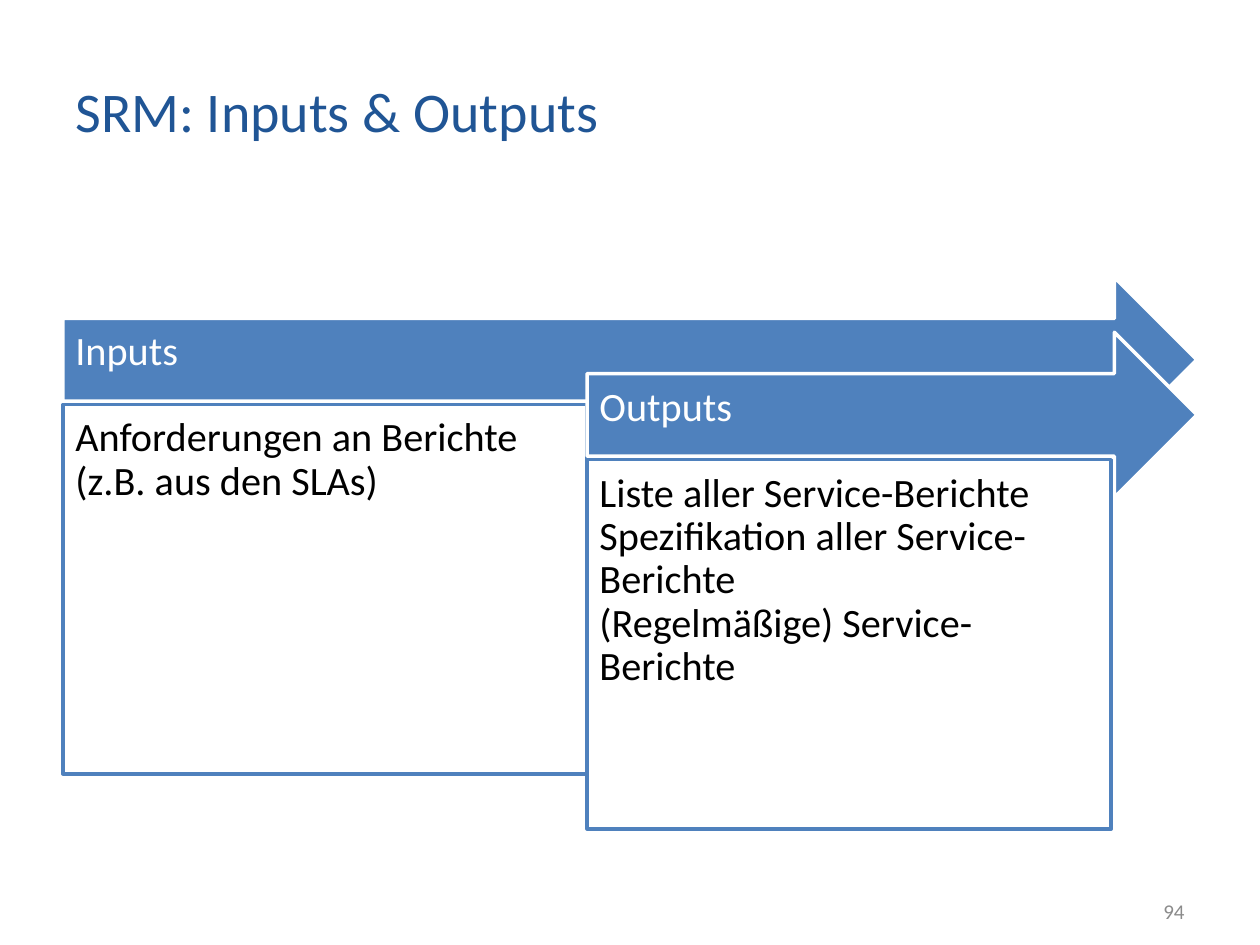
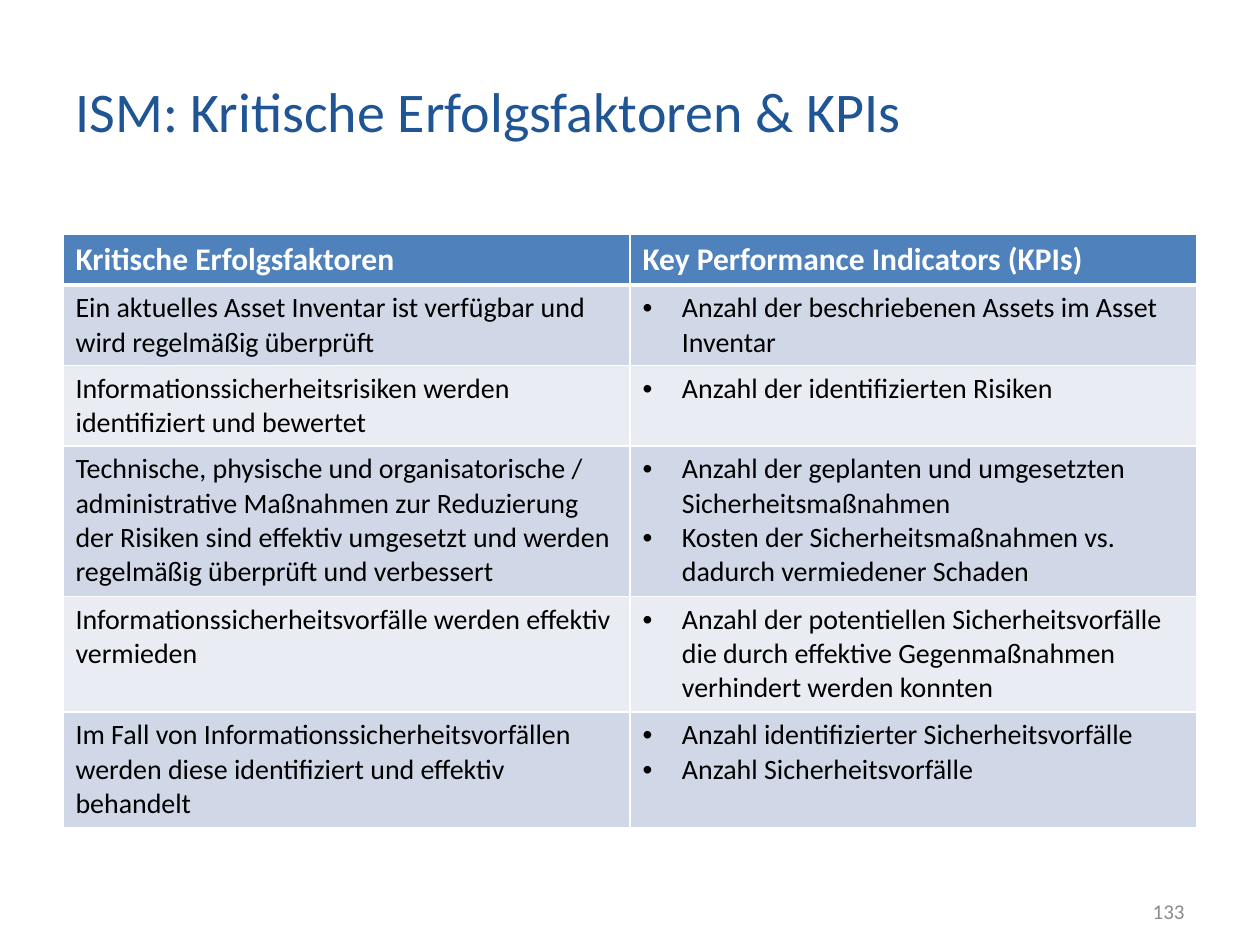
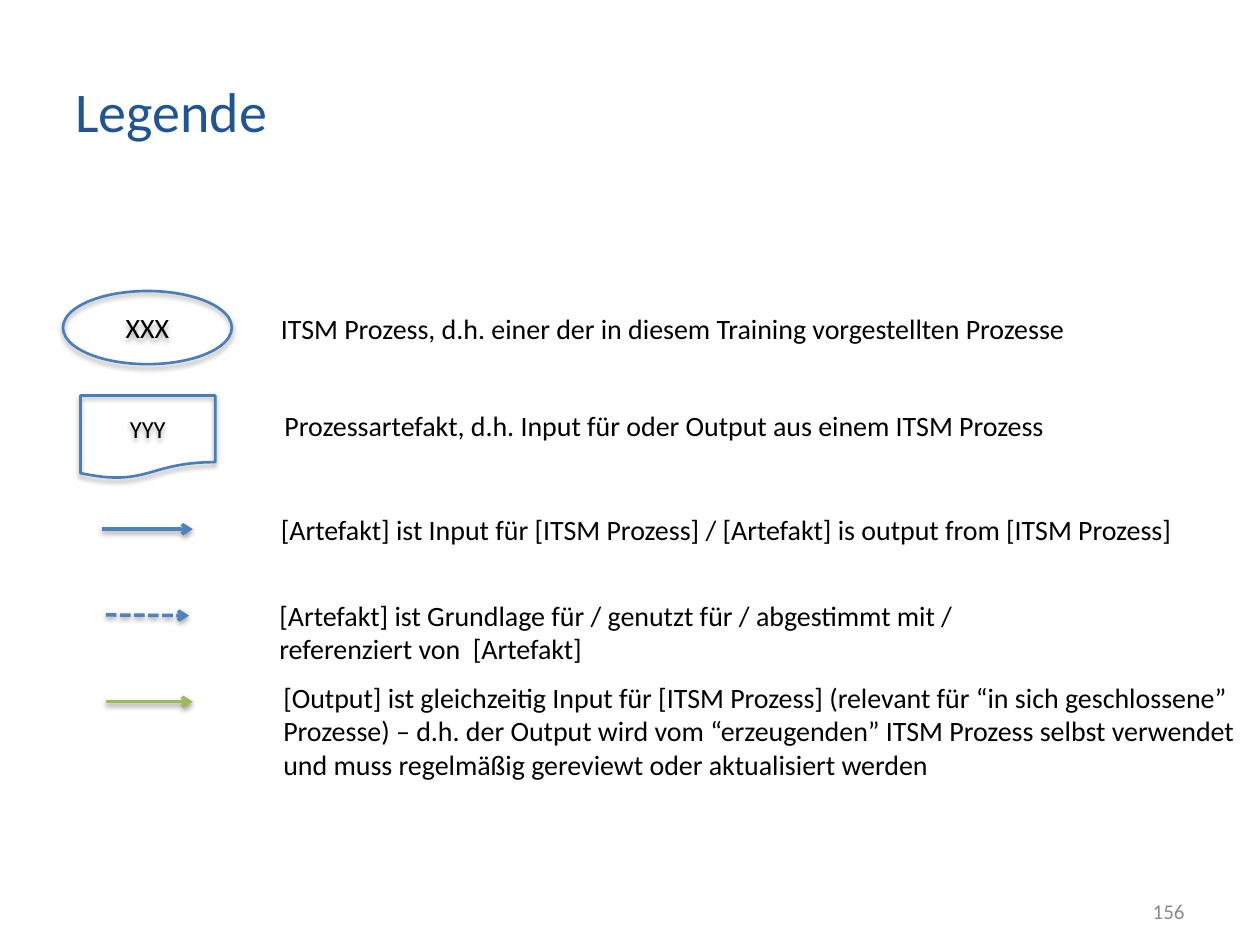
from dataclasses import dataclass

from lxml.etree import SubElement as Sub
from pptx import Presentation
from pptx.dml.color import RGBColor as Rgb
from pptx.enum.dml import MSO_LINE as Dash
from pptx.enum.shapes import MSO_CONNECTOR as Conn, MSO_SHAPE as Kind
from pptx.enum.text import MSO_ANCHOR as Anchor, PP_ALIGN as Align
from pptx.oxml.ns import qn
from pptx.util import Pt

FONT = "Calibri"
NAVY, BLUE, EDGE, GREEN = "205595", "4F81BD", "4A7EBB", "9BBB59"
WHITE, BLACK, GREY = "FFFFFF", "000000", "8B8B8B"
BANDS = ("D0D8E7", "E9ECF3")
LEFT, RIGHT = 36, 684


@dataclass
class Box:
    x: float
    y: float
    w: float
    h: float

    def pts(self) -> tuple:
        return Pt(self.x), Pt(self.y), Pt(self.w), Pt(self.h)


@dataclass
class Style:
    size: float
    color: str = BLACK
    bold: bool = False
    align: Align = Align.LEFT
    space: float = 1.0
    bullet: bool = False


@dataclass
class Panel:
    head: str
    lines: list[str]


@dataclass
class Symbol:
    kind: Kind
    box: Box
    text: str
    size: float


@dataclass
class Arrow:
    x1: float
    y1: float
    x2: float
    y2: float
    color: str = BLUE
    dash: bool = False


@dataclass
class Note:
    box: Box
    lines: list[str]


def tint(code: str) -> Rgb:
    return Rgb.from_string(code)


def write(frame, lines: list[str], style: Style) -> None:
    for i, line in enumerate(lines):
        para = frame.add_paragraph() if i else frame.paragraphs[0]
        para.text = line
        para.alignment = style.align
        para.line_spacing = style.space
        if style.bullet:
            props = para._p.get_or_add_pPr()
            props.set("marL", str(Pt(22.5)))
            props.set("indent", str(-Pt(22.5)))
            Sub(props, qn("a:buFont"), typeface="Arial")
            Sub(props, qn("a:buChar"), char="•")
        font = para.font
        font.name, font.size, font.bold = FONT, Pt(style.size), style.bold
        font.color.rgb = tint(style.color)


def label(slide, box: Box, lines: list[str], style: Style,
          anchor: Anchor = Anchor.TOP, wrap: bool = True) -> None:
    frame = slide.shapes.add_textbox(*box.pts()).text_frame
    frame.word_wrap = wrap
    frame.vertical_anchor = anchor
    write(frame, lines, style)


def shade(shape, alpha: int, dist: float) -> None:
    props = shape._element.spPr
    for old in props.findall(qn("a:effectLst")):
        props.remove(old)
    drop = Sub(Sub(props, qn("a:effectLst")), qn("a:outerShdw"),
               blurRad=str(Pt(3.1)), dist=str(Pt(dist)), dir="5400000",
               rotWithShape="0")
    color = Sub(drop, qn("a:srgbClr"), val=BLACK)
    Sub(color, qn("a:alpha"), val=str(alpha * 1000))


def solid(slide, kind: Kind, box: Box, fill: str | None, edge: str, width: float):
    shape = slide.shapes.add_shape(kind, *box.pts())
    shape.shadow.inherit = False
    if fill:
        shape.fill.solid()
        shape.fill.fore_color.rgb = tint(fill)
    else:
        shape.fill.background()
    shape.line.color.rgb = tint(edge)
    shape.line.width = Pt(width)
    return shape


def inset(frame, left: float, top: float, right: float, bottom: float) -> None:
    frame.margin_left, frame.margin_top = Pt(left), Pt(top)
    frame.margin_right, frame.margin_bottom = Pt(right), Pt(bottom)


def panel(slide, item: Panel, step: int) -> None:
    x, y = LEFT + 299.5 * step, 158.4 + 31.5 * step
    style = Style(23, WHITE, space=0.9)
    bar = solid(slide, Kind.RIGHT_ARROW, Box(x, y, RIGHT - x, 94.4), BLUE, WHITE, 2)
    inset(bar.text_frame, 7.2, 7.2, 20, 15)
    write(bar.text_frame, [item.head], style)
    body = solid(slide, Kind.RECTANGLE, Box(x, y + 72.8, 299.5, 211), WHITE, BLUE, 2)
    inset(body.text_frame, 7.2, 7.2, 7.2, 7.2)
    body.text_frame.vertical_anchor = Anchor.TOP
    write(body.text_frame, item.lines, Style(23, space=0.9))


def border(cell, foot: float) -> None:
    props = cell._tc.get_or_add_tcPr()
    for side, width in (("L", 0.96), ("R", 0.96), ("T", 0.96), ("B", foot)):
        line = Sub(props, qn(f"a:ln{side}"), w=str(Pt(width)))
        Sub(Sub(line, qn("a:solidFill")), qn("a:srgbClr"), val=WHITE)


def grid(slide, rows: list, highs: list[float]) -> None:
    box = Box(LEFT, 134, RIGHT - LEFT, sum(highs))
    table = slide.shapes.add_table(len(rows), 2, *box.pts()).table
    for r, (row, high) in enumerate(zip(rows, highs)):
        table.rows[r].height = Pt(high)
        for c, lines in enumerate(row):
            cell = table.cell(r, c)
            border(cell, 0.96 if r else 3)
            cell.fill.solid()
            cell.fill.fore_color.rgb = tint(BANDS[(r - 1) % 2] if r else BLUE)
            style = Style(16, bullet=c == 1) if r else Style(18, WHITE, True)
            write(cell.text_frame, lines, style)


def symbol(slide, item: Symbol) -> None:
    shape = solid(slide, item.kind, item.box, None, EDGE, 1.5)
    shade(shape, 35, 1.8)
    write(shape.text_frame, [item.text], Style(item.size, align=Align.CENTER))


def arrow(slide, item: Arrow) -> None:
    ends = (Pt(v) for v in (item.x1, item.y1, item.x2, item.y2))
    link = slide.shapes.add_connector(Conn.STRAIGHT, *ends)
    link.line.color.rgb = tint(item.color)
    link.line.width = Pt(2)
    if item.dash:
        link.line.dash_style = Dash.SQUARE_DOT
    Sub(link.line._get_or_add_ln(), qn("a:tailEnd"), type="arrow")
    shade(link, 38, 1.6)


def start(deck, title: str, number: int):
    slide = deck.slides.add_slide(deck.slide_layouts[6])
    label(slide, Box(LEFT, 21.6, 579, 82.8), [title], Style(32, NAVY), Anchor.MIDDLE)
    label(slide, Box(516, 506, 168, 28.8), [str(number)],
          Style(12, GREY, align=Align.RIGHT), Anchor.MIDDLE)
    return slide


PANELS = [
    Panel("Inputs", ["Anforderungen an Berichte (z.B. aus den SLAs)"]),
    Panel("Outputs", ["Liste aller Service-Berichte",
                      "Spezifikation aller Service-Berichte",
                      "(Regelmäßige) Service-Berichte"]),
]

HIGHS = [28, 46, 46, 86, 66, 66]
ROWS = [
    (["Kritische Erfolgsfaktoren"], ["Key Performance Indicators (KPIs)"]),
    (["Ein aktuelles Asset Inventar ist verfügbar und wird regelmäßig überprüft"],
     ["Anzahl der beschriebenen Assets im Asset Inventar"]),
    (["Informationssicherheitsrisiken werden identifiziert und bewertet"],
     ["Anzahl der identifizierten Risiken"]),
    (["Technische, physische und organisatorische / administrative Maßnahmen zur "
      "Reduzierung der Risiken sind effektiv umgesetzt und werden regelmäßig "
      "überprüft und verbessert"],
     ["Anzahl der geplanten und umgesetzten Sicherheitsmaßnahmen",
      "Kosten der Sicherheitsmaßnahmen vs. dadurch vermiedener Schaden"]),
    (["Informationssicherheitsvorfälle werden effektiv vermieden"],
     ["Anzahl der potentiellen Sicherheitsvorfälle die durch effektive "
      "Gegenmaßnahmen verhindert werden konnten"]),
    (["Im Fall von Informationssicherheitsvorfällen werden diese identifiziert "
      "und effektiv behandelt"],
     ["Anzahl identifizierter Sicherheitsvorfälle", "Anzahl Sicherheitsvorfälle"]),
]

SYMBOLS = [
    Symbol(Kind.OVAL, Box(36, 166.3, 96.5, 41.8), "XXX", 16),
    Symbol(Kind.FLOWCHART_DOCUMENT, Box(46, 226, 77, 47.5), "YYY", 14),
]

ARROWS = [
    Arrow(58.3, 302.4, 110.2, 302.4),
    Arrow(60.5, 351.4, 108, 351.8, dash=True),
    Arrow(60.5, 401, 110.2, 401, GREEN),
]

NOTES = [
    Note(Box(153.4, 174.2, 463, 26),
         ["ITSM Prozess, d.h. einer der in diesem Training vorgestellten Prozesse"]),
    Note(Box(155.5, 229.7, 448.6, 26),
         ["Prozessartefakt, d.h. Input für oder Output aus einem ITSM Prozess"]),
    Note(Box(153.4, 289.4, 524.2, 26),
         ["[Artefakt] ist Input für [ITSM Prozess] / "
          "[Artefakt] is output from [ITSM Prozess]"]),
    Note(Box(152.6, 338.4, 403.2, 45.4),
         ["[Artefakt] ist Grundlage für / genutzt für / abgestimmt mit / \n"
          "referenziert von  [Artefakt]"]),
    Note(Box(154.8, 385.2, 558, 64.8),
         ["[Output] ist gleichzeitig Input für [ITSM Prozess] "
          "(relevant für “in sich geschlossene”",
          "Prozesse) – d.h. der Output wird vom “erzeugenden” ITSM Prozess "
          "selbst verwendet\nund muss regelmäßig gereviewt oder aktualisiert werden"]),
]


def main() -> None:
    deck = Presentation()
    deck.slide_width, deck.slide_height = Pt(720), Pt(540)

    slide = start(deck, "SRM: Inputs & Outputs", 94)
    for step, item in enumerate(PANELS):
        panel(slide, item, step)

    slide = start(deck, "ISM: Kritische Erfolgsfaktoren & KPIs", 133)
    grid(slide, ROWS, HIGHS)

    slide = start(deck, "Legende", 156)
    for item in SYMBOLS:
        symbol(slide, item)
    for item in ARROWS:
        arrow(slide, item)
    for note in NOTES:
        label(slide, note.box, note.lines, Style(16), wrap=False)

    deck.save("out.pptx")


if __name__ == "__main__":
    main()
